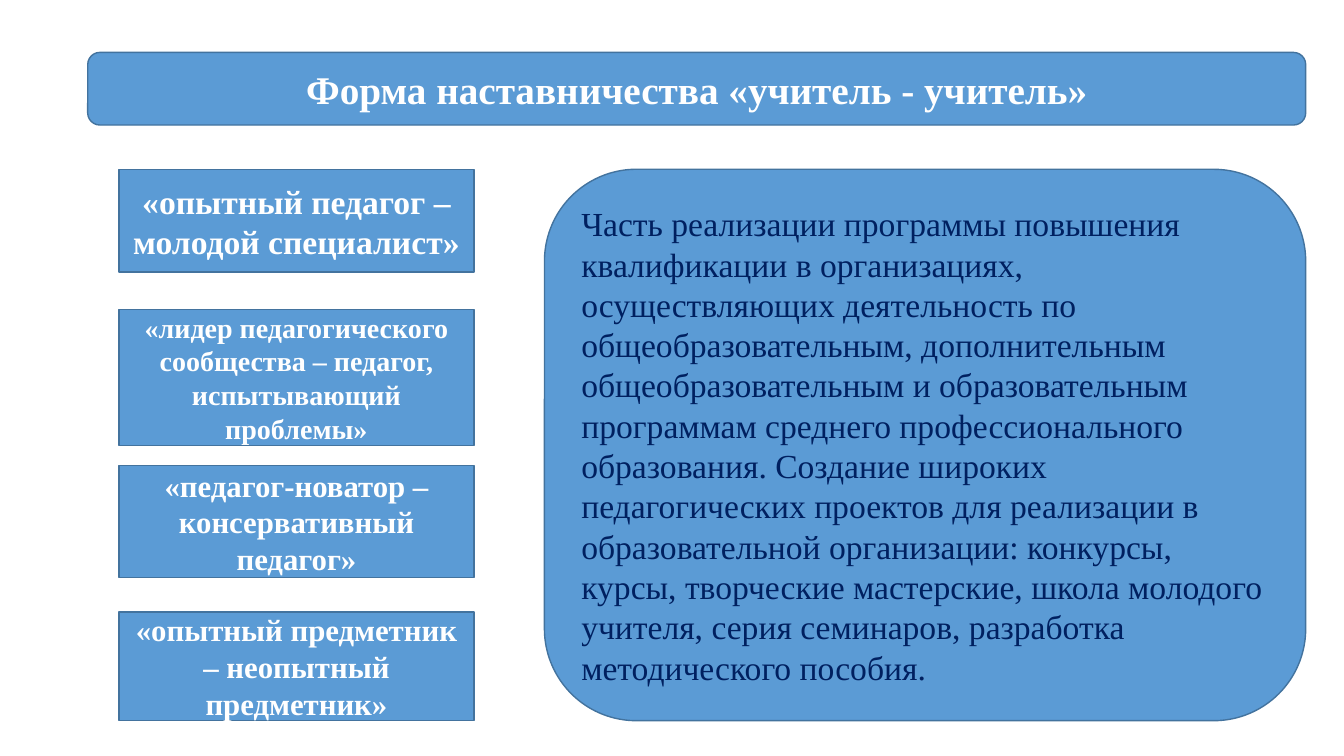
import pptx
import pptx.util
import pptx.dml.color
import pptx.enum.shapes
import pptx.enum.text

Inches = pptx.util.Inches
SHAPES = pptx.enum.shapes.MSO_SHAPE
ALIGN = pptx.enum.text.PP_ALIGN


def color(value):
    return pptx.dml.color.RGBColor.from_string(value)


class MentoringSlide:
    fill = "5B9BD5"
    outline = "43739E"
    heading_color = "FFFFFF"
    body_color = "002060"
    font = "Times New Roman"

    def __init__(self, deck):
        self.slide = deck.slides.add_slide(deck.slide_layouts[6])

    def panel(self, kind, box, text, size, text_color, align, bold):
        panel = self.slide.shapes.add_shape(kind, *map(Inches, box))
        panel.shadow.inherit = False
        panel.fill.solid()
        panel.fill.fore_color.rgb = color(self.fill)
        panel.line.color.rgb = color(self.outline)
        panel.line.width = pptx.util.Pt(1)
        frame = panel.text_frame
        frame.word_wrap = True
        frame.vertical_anchor = pptx.enum.text.MSO_ANCHOR.MIDDLE
        paragraph = frame.paragraphs[0]
        paragraph.alignment = align
        words = paragraph.add_run()
        words.text = text
        formats = {"name": self.font, "size": pptx.util.Pt(size), "bold": bold}
        for attribute, value in formats.items():
            setattr(words.font, attribute, value)
        words.font.color.rgb = color(text_color)

    def title(self, box, text):
        self.panel(SHAPES.ROUNDED_RECTANGLE, box, text, 28, self.heading_color, ALIGN.CENTER, True)

    def pairing(self, box, text, size):
        self.panel(SHAPES.RECTANGLE, box, text, size, self.heading_color, ALIGN.CENTER, True)

    def description(self, box, text):
        self.panel(SHAPES.ROUNDED_RECTANGLE, box, text, 24, self.body_color, ALIGN.LEFT, False)


def main():
    deck = pptx.Presentation()
    deck.slide_width = Inches(13.33)
    deck.slide_height = Inches(7.5)
    mentoring = MentoringSlide(deck)

    mentoring.title((0.87, 0.52, 12.08, 0.72), "Форма наставничества «учитель - учитель»")

    pairings = [
        (1.68, 1.02, 24, "«опытный педагог – молодой специалист»"),
        (3.07, 1.35, 20, "«лидер педагогического сообщества – педагог, испытывающий проблемы»"),
        (4.62, 1.11, 22, "«педагог-новатор – консервативный педагог»"),
        (6.07, 1.08, 22, "«опытный предметник – неопытный предметник»"),
    ]
    for top, height, size, text in pairings:
        mentoring.pairing((1.18, top, 3.52, height), text, size)

    mentoring.description(
        (5.4, 1.68, 7.55, 5.47),
        "Часть реализации программы повышения квалификации в организациях, "
        "осуществляющих деятельность по общеобразовательным, дополнительным "
        "общеобразовательным и образовательным программам среднего "
        "профессионального образования. Создание широких педагогических "
        "проектов для реализации в образовательной организации: конкурсы, "
        "курсы, творческие мастерские, школа молодого учителя, серия "
        "семинаров, разработка методического пособия.",
    )
    deck.save("out.pptx")


if __name__ == "__main__":
    main()
